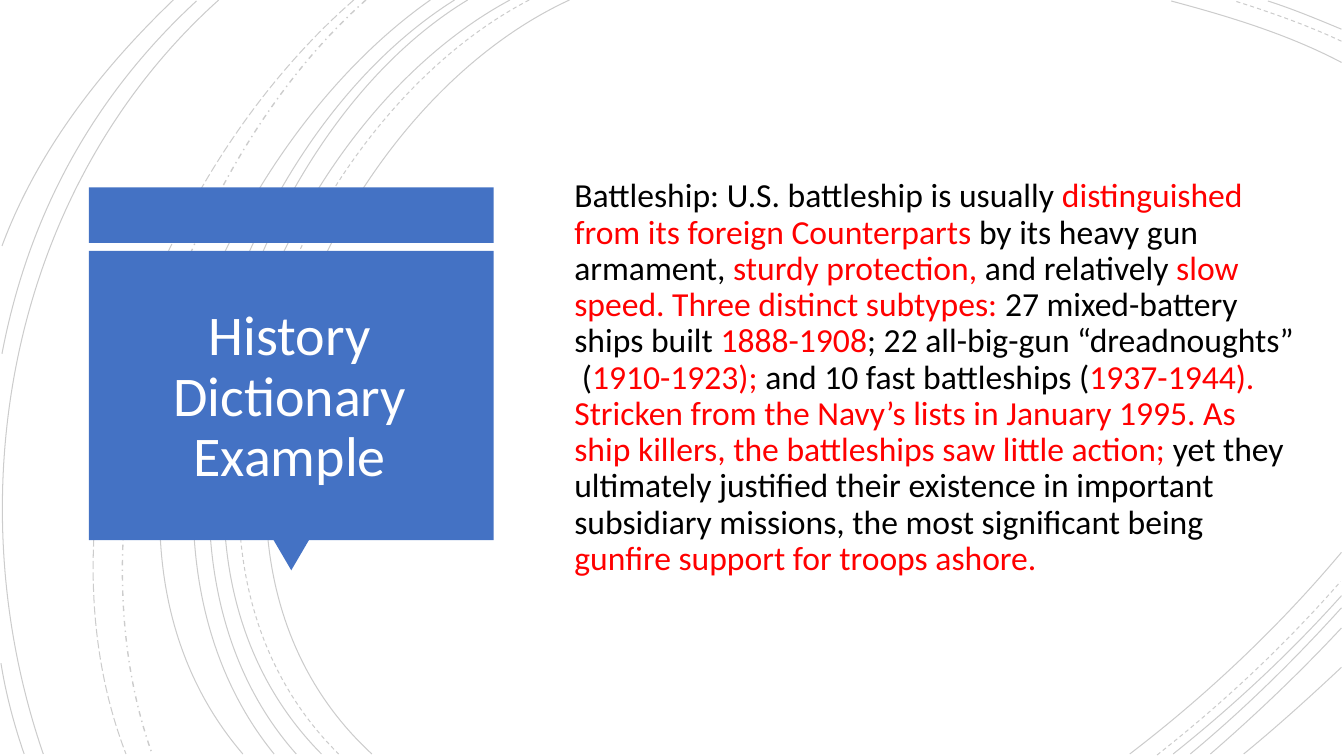
from lxml.etree import SubElement
from pptx import Presentation
from pptx.dml.color import RGBColor
from pptx.enum.dml import MSO_LINE as Dash
from pptx.enum.shapes import MSO_SHAPE as Preset
from pptx.enum.text import MSO_ANCHOR as Anchor, MSO_AUTO_SIZE as AutoSize, PP_ALIGN as Align
from pptx.oxml.ns import qn
from pptx.util import Cm, Pt

COLORS = {"line": "000000", "badge": "4472C4", "title": "FFFFFF", "plain": "000000", "key": "FF0000"}
UNIT = 2.54
ARCS = {
    (Dash.SOLID, 0.75): [
        [(5.65, 0), (3.15, 1.15), (1.43, 5.4), (3.69, 7.48)],
        [(13.31, 0.62), (12.78, 0.34), (12.18, 0.16), (11.62, 0.01)],
        [(11.21, 7.48), (11.97, 6.9), (12.69, 6.22), (13.31, 5.48)],
        [(5.06, 0), (2.7, 1.27), (1.1, 5.37), (3.19, 7.48)],
        [(13.31, 0.29), (13.07, 0.19), (12.83, 0.09), (12.58, 0.01)],
        [(11.64, 7.48), (12.23, 7.01), (12.8, 6.48), (13.31, 5.91)],
        [(4.64, 0), (2.44, 1.33), (1.1, 5.41), (2.94, 7.48)],
        [(11.81, 7.48), (12.34, 7.04), (12.84, 6.55), (13.31, 6.03)],
        [(4.51, 0), (2.31, 1.38), (0.97, 5.33), (2.72, 7.48)],
        [(12.01, 7.48), (12.46, 7.09), (12.9, 6.67), (13.31, 6.23)],
        [(4.27, 0), (2.17, 1.47), (0.53, 5.29), (2.41, 7.48)],
        [(12.34, 7.48), (12.67, 7.21), (12.99, 6.92), (13.31, 6.62)],
        [(2.17, 0), (0.11, 1.85), (-0.46, 4.9), (0.43, 7.48)],
        [(1.95, 0.01), (0.92, 0.96), (0.28, 2.14), (0.02, 3.51)],
        [(0.01, 6.58), (0.06, 6.89), (0.14, 7.19), (0.24, 7.48)],
        [(1.72, 0), (1, 0.69), (0.37, 1.5), (0.02, 2.44)],
    ],
    (Dash.DASH, 0.75): [
        [(5.25, 0), (2.85, 1.25), (1.23, 5.37), (3.36, 7.48)],
        [(13.31, 0.41), (12.97, 0.25), (12.6, 0.12), (12.25, 0.01)],
        [(11.48, 7.49), (12.13, 6.98), (12.75, 6.4), (13.3, 5.77)],
    ],
    (Dash.DASH_DOT, 1): [[(3.63, 0), (1.76, 1.66), (0.65, 5.09), (1.51, 7.48)]],
    (Dash.LONG_DASH, 0.75): [[(3.51, 0), (1.57, 1.69), (0.29, 4.99), (1.25, 7.48)]],
}
DEFINITION = [
    ("plain", "Battleship: U.S. battleship is usually "),
    ("key", "distinguished from its foreign Counterparts "),
    ("plain", "by its heavy gun armament, "),
    ("key", "sturdy protection, "),
    ("plain", "and relatively "),
    ("key", "slow speed. Three distinct subtypes: "),
    ("plain", "27 mixed-battery ships built "),
    ("key", "1888-1908"),
    ("plain", "; 22 all-big-gun “dreadnoughts”  ("),
    ("key", "1910-1923); "),
    ("plain", "and 10 fast battleships ("),
    ("key", "1937-1944). Stricken from the Navy’s lists in January 1995. "
            "As ship killers, the battleships saw little action; "),
    ("plain", "yet they ultimately justified their existence in important subsidiary missions, "
              "the most significant being "),
    ("key", "gunfire support for troops ashore."),
]


def apply_format(target, values):
    for key, value in values.items():
        setattr(target, key, value)


def color(key):
    return RGBColor.from_string(COLORS[key])


def draw_arc(arcs, left, top, points, dash, weight):
    start, *rest = [(left + Cm(x * UNIT), top + Cm(y * UNIT)) for x, y in points]
    outline = arcs.build_freeform(*start)
    outline.add_line_segments(rest, close=False)
    arc = outline.convert_to_shape()
    segments = list(arc._element.iter(qn("a:lnTo")))
    curve = SubElement(segments[0].getparent(), qn("a:cubicBezTo"))
    for segment in segments:
        curve.append(segment[0])
        segment.getparent().remove(segment)
    arc.shadow.inherit = False
    arc.fill.background()
    arc.line.color.rgb = color("line")
    apply_format(arc.line, {"width": Pt(weight), "dash_style": dash})
    ink = next(arc.line._ln.iter(qn("a:srgbClr")))
    SubElement(ink, qn("a:alpha"), val="20000")


def draw_backdrop(slide, left, top):
    arcs = slide.shapes.add_group_shape().shapes
    for (dash, weight), curves in ARCS.items():
        for points in curves:
            draw_arc(arcs, left, top, points, dash, weight)


def draw_badge(slide, left, top, width, height):
    badge = slide.shapes.add_group_shape().shapes
    banner, pointer = Cm(1.4), Cm(0.76)
    pointer_width = Cm(0.89)
    panel_top = top + banner + Cm(0.2)
    panel_bottom = top + height - pointer
    pieces = [
        (Preset.RECTANGLE, left, top, width, banner, 0),
        (Preset.ISOSCELES_TRIANGLE, left + (width - pointer_width) // 2, panel_bottom,
         pointer_width, pointer, 180),
        (Preset.RECTANGLE, left, panel_top, width, panel_bottom - panel_top, 0),
    ]
    for preset, *box, turn in pieces:
        piece = badge.add_shape(preset, *box)
        piece.rotation = turn
        piece.shadow.inherit = False
        piece.fill.solid()
        piece.fill.fore_color.rgb = color("badge")
        piece.line.fill.background()


def fill_placeholder(holder, box, runs, size, paragraph_format):
    apply_format(holder, dict(zip(("left", "top", "width", "height"), box)))
    holder._element.getparent().append(holder._element)
    frame = holder.text_frame
    apply_format(frame, {"word_wrap": True, "auto_size": AutoSize.NONE,
                         "vertical_anchor": Anchor.MIDDLE})
    paragraph = frame.paragraphs[0]
    apply_format(paragraph, {"line_spacing": 0.9, **paragraph_format})
    for key, words in runs:
        run = paragraph.add_run()
        run.text = words
        apply_format(run.font, {"name": "Calibri", "size": Pt(size)})
        run.font.color.rgb = color(key)
    return paragraph


def write_title(slide, *box):
    fill_placeholder(slide.shapes.title, box, [("title", "History Dictionary Example")], 40,
                     {"alignment": Align.CENTER})


def write_definition(slide, *box):
    paragraph = fill_placeholder(slide.placeholders[1], box, DEFINITION, 24,
                                 {"alignment": Align.LEFT, "space_before": Pt(10)})
    properties = paragraph._p.get_or_add_pPr()
    for key in ("marL", "indent"):
        properties.set(key, "0")
    SubElement(properties, qn("a:buNone"))


def main():
    deck = Presentation()
    apply_format(deck, {"slide_width": Cm(33.87), "slide_height": Cm(19.05)})
    slide = deck.slides.add_slide(deck.slide_layouts[1])
    draw_backdrop(slide, Cm(0), Cm(0))
    draw_badge(slide, Cm(2.24), Cm(4.72), Cm(10.2), Cm(9.65))
    write_title(slide, Cm(2.51), Cm(6.71), Cm(9.58), Cm(6.65))
    write_definition(slide, Cm(14.22), Cm(2.24), Cm(18.69), Cm(14.58))
    deck.save("out.pptx")


if __name__ == "__main__":
    main()
